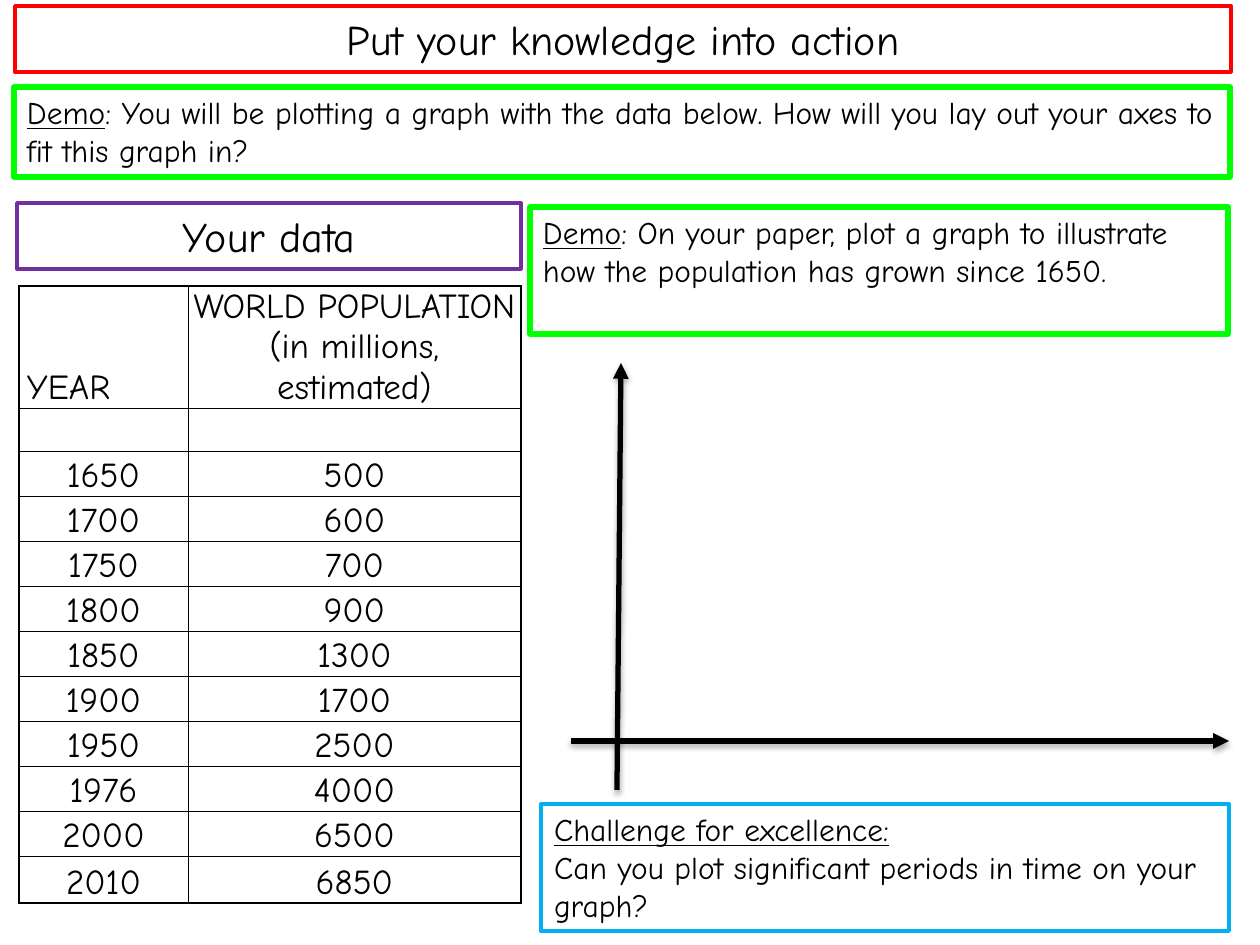
"""Build the slide about plotting world population."""
from dataclasses import dataclass

from lxml.etree import SubElement
from pptx import Presentation
from pptx.dml.color import RGBColor
from pptx.enum.shapes import MSO_CONNECTOR, MSO_SHAPE
from pptx.enum.text import MSO_ANCHOR, MSO_AUTO_SIZE, PP_ALIGN
from pptx.oxml import parse_xml
from pptx.oxml.ns import nsdecls, qn
from pptx.util import Emu, Pt


@dataclass(frozen=True)
class Theme:
    """Colours, font and type sizes of the slide."""
    font: str = "Comic Neue"
    ink: str = "000000"
    paper: str = "FFFFFF"
    title: str = "FF0000"
    task: str = "00FF00"
    data: str = "7030A0"
    challenge: str = "00B0F0"
    heading_size: int = 24
    table_size: int = 20
    body_size: int = 18


def px(length):
    """Turn pixels at 126 to the inch into EMU."""
    return Emu(round(length * 914400 / 126))


def set_values(target, values):
    """Set each named attribute of the target."""
    for name, value in values.items():
        setattr(target, name, value)


class SlideBuilder:
    """Draws styled elements on one slide."""

    def __init__(self, slide, theme):
        """Keep the slide and its theme."""
        self.slide = slide
        self.theme = theme

    def add_runs(self, paragraph, runs, size, align=PP_ALIGN.LEFT):
        """Fill a paragraph with (text, underlined) runs."""
        paragraph.alignment = align
        for text, underline in runs:
            run = paragraph.add_run()
            run.text = text
            set_values(run.font, {"name": self.theme.font, "size": Pt(size),
                                  "bold": False, "underline": underline})
            run.font.color.rgb = RGBColor.from_string(self.theme.ink)

    def frame(self, shape, color, width, fill=True):
        """Give a shape its outline and fill."""
        shape.line.color.rgb = RGBColor.from_string(color)
        shape.line.width = Pt(width)
        if fill:
            shape.fill.solid()
            shape.fill.fore_color.rgb = RGBColor.from_string(self.theme.paper)
        else:
            shape.fill.background()

    def set_text(self, shape, paragraphs, size, align, anchor):
        """Put paragraphs into a shape."""
        text_frame = shape.text_frame
        set_values(text_frame, {"word_wrap": True, "vertical_anchor": anchor,
                                "auto_size": MSO_AUTO_SIZE.NONE,
                                "margin_left": px(13), "margin_right": px(13),
                                "margin_top": px(6), "margin_bottom": px(6)})
        for index, runs in enumerate(paragraphs):
            paragraph = text_frame.add_paragraph() if index else text_frame.paragraphs[0]
            self.add_runs(paragraph, runs, size, align)

    def rectangle(self, box):
        """Add a plain rectangle."""
        shape = self.slide.shapes.add_shape(MSO_SHAPE.RECTANGLE, *map(px, box))
        shape.shadow.inherit = False
        return shape

    def heading(self, shape, text, color):
        """Format a shape as a centred heading."""
        self.frame(shape, color, 2)
        self.set_text(shape, [[(text, False)]], self.theme.heading_size,
                      PP_ALIGN.CENTER, MSO_ANCHOR.MIDDLE)

    def title(self, box, text):
        """Place and format the title placeholder."""
        shape = self.slide.shapes.title
        set_values(shape, dict(zip(("left", "top", "width", "height"), map(px, box))))
        self.heading(shape, text, self.theme.title)

    def note(self, box, paragraphs, color, width, fill=True):
        """Add a framed instruction."""
        shape = self.rectangle(box)
        self.frame(shape, color, width, fill)
        self.set_text(shape, paragraphs, self.theme.body_size,
                      PP_ALIGN.LEFT, MSO_ANCHOR.TOP)

    def arrow(self, start, end):
        """Add an axis with an arrowhead and a soft shadow."""
        connector = self.slide.shapes.add_connector(
            MSO_CONNECTOR.STRAIGHT, *map(px, start + end))
        connector.line.color.rgb = RGBColor.from_string(self.theme.ink)
        connector.line.width = Pt(3)
        properties = connector._element.spPr
        SubElement(properties.find(qn("a:ln")), qn("a:tailEnd"), type="triangle")
        properties.append(parse_xml(
            f'<a:effectLst {nsdecls("a")}><a:outerShdw blurRad="{Pt(3.1)}" '
            f'dist="{Pt(1.8)}" dir="5400000" rotWithShape="0">'
            f'<a:srgbClr val="{self.theme.ink}"><a:alpha val="35000"/></a:srgbClr>'
            '</a:outerShdw></a:effectLst>'))

    def borders(self, cell, outer_edges):
        """Draw cell borders, thicker on the outer edges."""
        for index, edge in enumerate("LRTB"):
            width = Pt(1 if edge in outer_edges else 0.5)
            cell._tc.get_or_add_tcPr().insert(index, parse_xml(
                f'<a:ln{edge} {nsdecls("a")} w="{width}"><a:solidFill>'
                f'<a:srgbClr val="{self.theme.ink}"/></a:solidFill></a:ln{edge}>'))

    def table(self, box, rows, widths, heights):
        """Add a ruled table whose first header is left aligned."""
        table = self.slide.shapes.add_table(
            len(rows), len(widths), *map(px, box)).table
        set_values(table, {"first_row": False, "horz_banding": False})
        for column, width in zip(table.columns, widths):
            column.width = px(width)
        for row, height in zip(table.rows, heights):
            row.height = px(height)
        for row_index, values in enumerate(rows):
            for column_index, text in enumerate(values):
                cell = table.cell(row_index, column_index)
                first = row_index == column_index == 0
                set_values(cell, {"margin_left": px(8 if first else 1),
                                  "margin_right": px(1), "margin_top": px(1),
                                  "margin_bottom": 0,
                                  "vertical_anchor": MSO_ANCHOR.BOTTOM})
                cell.fill.background()
                self.borders(cell, ("L" if column_index == 0 else "R")
                             + ("T" if row_index == 0 else "")
                             + ("B" if row_index == len(rows) - 1 else ""))
                paragraph = cell.text_frame.paragraphs[0]
                if text:
                    self.add_runs(paragraph, [(text, False)], self.theme.table_size,
                                  PP_ALIGN.LEFT if first else PP_ALIGN.CENTER)
                else:
                    paragraph.font.size = Pt(self.theme.body_size)


POPULATION = {1650: 500, 1700: 600, 1750: 700, 1800: 900, 1850: 1300,
              1900: 1700, 1950: 2500, 1976: 4000, 2000: 6500, 2010: 6850}


def main():
    """Build and save the presentation."""
    presentation = Presentation()
    set_values(presentation, {"slide_width": px(1260), "slide_height": px(945)})
    slide = presentation.slides.add_slide(presentation.slide_layouts[5])
    theme = Theme()
    builder = SlideBuilder(slide, theme)

    builder.title((15, 6, 1216, 66), "Put your knowledge into action")
    builder.note((14, 87, 1216, 90), [[
        ("Demo", True),
        (": You will be plotting a graph with the data below. "
         "How will you lay out your axes to fit this graph in?", False)]],
        theme.task, 3)
    builder.heading(builder.rectangle((17, 203, 504, 66)), "Your data", theme.data)
    builder.note((530, 207, 698, 127), [[
        ("Demo", True),
        (": On your paper, plot a graph to illustrate "
         "how the population has grown since 1650.", False)]],
        theme.task, 3)

    rows = [("YEAR", "WORLD POPULATION (in millions, estimated)"), ("", "")]
    rows += [(str(year), str(millions)) for year, millions in POPULATION.items()]
    builder.table((19, 286, 502, 622), rows, (169, 333), [86, 43] + [45] * 9 + [47])

    builder.arrow((571, 741), (1229, 741))
    builder.arrow((617, 790), (621, 363))
    builder.note((541, 804, 688, 127), [
        [("Challenge for excellence:", True)],
        [("Can you plot significant periods in time on your graph?", False)]],
        theme.challenge, 2.25, fill=False)
    presentation.save("out.pptx")


if __name__ == "__main__":
    main()
